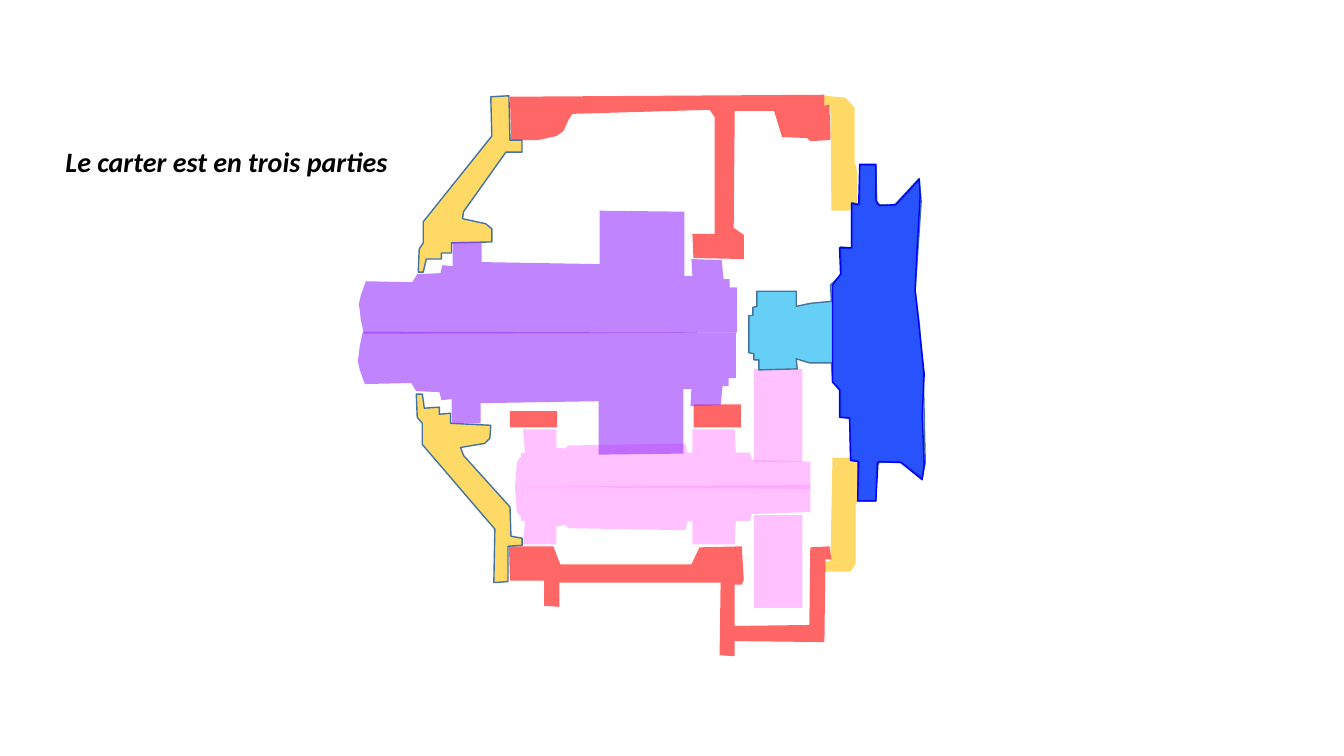
from dataclasses import dataclass
from typing import Optional, Union

import pptx
import pptx.dml.color
import pptx.enum.shapes
import pptx.enum.text
import pptx.oxml.ns
import pptx.util
from lxml import etree
from pptx.util import Cm

COLOURS = {
    "cover": "FFC000", "gear": "FF99FF", "casing": "FF0000",
    "hub": "00B0F0", "flange": "0000FF", "shaft": "9933FF",
    "edge": "43739E", "text": "000000",
}
OPACITY = 60
UNIT = Cm(2.54) / 100  # outlines are drawn in hundredths of an inch

Points = list[tuple[int, int]]


@dataclass
class Outline:
    points: Points
    fill: str
    edge: Optional[str] = None


@dataclass
class Block:
    left: float
    top: float
    width: float
    height: float
    fill: str
    edge: Optional[str] = None


Part = list[Union[Outline, Block]]


def mirrored(points: Points, axis: float, shift: int = 0) -> Points:
    """Reflect an outline in a horizontal axis."""
    return [(x + shift, round(2 * axis - y)) for x, y in points]


# Right cover
COVER_TOP = [(818, 95), (839, 97), (848, 107), (848, 162), (850, 166), (851, 203),
             (845, 204), (843, 209), (825, 209), (824, 105), (818, 105)]
COVER_BOTTOM = [(818, 567), (844, 567), (849, 559), (849, 501), (851, 496), (852, 460),
                (846, 458), (844, 454), (826, 454), (824, 557), (819, 557)]

# Main casing
CASING_TOP = [(506, 96), (818, 94), (818, 105), (823, 104), (824, 139), (804, 140),
              (801, 137), (776, 136), (768, 110), (729, 110), (728, 226), (738, 233),
              (738, 257), (688, 256), (687, 232), (709, 232), (709, 116), (704, 109),
              (568, 113), (564, 119), (561, 126), (559, 130), (552, 135), (534, 139),
              (507, 139)]
CASING_BOTTOM = [(505, 542), (549, 542), (556, 560), (686, 560), (694, 543), (736, 542),
                 (738, 575), (736, 580), (729, 580), (729, 621), (803, 620), (804, 543),
                 (823, 542), (825, 555), (819, 555), (818, 637), (729, 636), (729, 651),
                 (714, 650), (715, 578), (555, 578), (555, 602), (540, 601), (540, 576),
                 (506, 576)]

# Upper halves of the two shafts
LAYSHAFT = [(511, 483), (513, 458), (517, 453), (517, 449), (521, 449), (519, 426),
            (552, 426), (552, 444), (561, 445), (564, 442), (680, 440), (682, 449),
            (687, 449), (687, 426), (729, 426), (730, 449), (744, 449), (746, 456),
            (804, 458), (804, 485)]
MAIN_SHAFT = [(363, 279), (409, 280), (414, 272), (437, 271), (439, 263), (449, 264),
              (449, 240), (478, 240), (478, 260), (595, 262), (595, 209), (679, 210),
              (679, 274), (687, 274), (686, 257), (716, 258), (718, 277), (724, 277),
              (724, 285), (731, 285), (731, 330), (361, 331), (358, 317), (357, 308),
              (356, 302), (358, 293)]

# Hub and flange
HUB = [(912, 177), (887, 204), (870, 203), (869, 164), (853, 164), (853, 203), (845, 201),
       (845, 246), (834, 245), (835, 272), (824, 283), (825, 299), (804, 301), (790, 304),
       (790, 289), (751, 289), (751, 304), (747, 305), (747, 313), (743, 313), (743, 350),
       (748, 351), (748, 357), (753, 357), (753, 367), (791, 366), (790, 356), (803, 360),
       (825, 360), (826, 379), (834, 387), (834, 414), (843, 414), (844, 456), (851, 457),
       (851, 497), (869, 497), (870, 459), (893, 458), (915, 474), (918, 459), (916, 368),
       (912, 320), (908, 288), (914, 200)]
FLANGE = [(912, 178), (889, 203), (873, 204), (869, 199), (869, 163), (853, 163), (852, 203),
          (845, 202), (845, 246), (833, 246), (834, 272), (826, 283), (826, 379), (833, 387),
          (833, 414), (843, 415), (844, 457), (852, 458), (851, 497), (869, 497), (871, 461),
          (872, 458), (894, 459), (915, 476), (917, 461), (915, 410), (917, 371), (908, 288),
          (910, 246), (913, 195)]

# Left bell
BELL_TOP = [(518, 151), (518, 139), (506, 139), (505, 95), (487, 96), (488, 135), (420, 220),
            (420, 241), (416, 247), (415, 270), (420, 270), (423, 257), (438, 257),
            (438, 251), (448, 251), (448, 241), (488, 240), (488, 227), (482, 222),
            (459, 217), (460, 210), (502, 151)]
BELL_BOTTOM = [(507, 532), (518, 534), (518, 541), (504, 542), (504, 577), (490, 578),
               (491, 525), (419, 441), (419, 420), (414, 414), (413, 391), (419, 391),
               (421, 405), (436, 404), (436, 411), (447, 410), (447, 420), (487, 422),
               (486, 435), (481, 440), (457, 444), (460, 452), (506, 503)]

# Parts from back to front; the caption stands between the two lists
BACK_PARTS: list[Part] = [
    [Outline(COVER_TOP, "cover"), Outline(COVER_BOTTOM, "cover")],
    [Block(19, top, 1.22, 2.34, "gear") for top in (9.3, 12.98)],
    [Outline(CASING_TOP, "casing"),
     Block(17.48, 10.19, 1.19, 0.58, "casing"),
     Block(12.85, 10.36, 1.19, 0.41, "casing"),
     Outline(CASING_BOTTOM, "casing")],
    [Outline(LAYSHAFT, "gear"), Outline(mirrored(LAYSHAFT, 483), "gear")],
]
FRONT_PARTS: list[Part] = [
    [Outline(HUB, "hub", "edge"), Outline(FLANGE, "flange", "flange")],
    [Outline(BELL_TOP, "cover", "edge"), Outline(BELL_BOTTOM, "cover", "edge")],
    [Outline(MAIN_SHAFT, "shaft"), Outline(mirrored(MAIN_SHAFT, 330, shift=-1), "shaft")],
]


def colour(name: str) -> pptx.dml.color.RGBColor:
    return pptx.dml.color.RGBColor.from_string(COLOURS[name])


def draw_part(page, part: Part) -> None:
    """Draw the pieces of one part as a group."""
    group = page.shapes.add_group_shape()
    for piece in part:
        if isinstance(piece, Block):
            shape = group.shapes.add_shape(
                pptx.enum.shapes.MSO_SHAPE.RECTANGLE, Cm(piece.left), Cm(piece.top),
                Cm(piece.width), Cm(piece.height))
        else:
            builder = group.shapes.build_freeform(*piece.points[0], scale=UNIT)
            builder.add_line_segments(piece.points[1:], close=True)
            shape = builder.convert_to_shape()
        shape.shadow.inherit = False
        shape.fill.solid()
        shape.fill.fore_color.rgb = colour(piece.fill)
        tint = shape.element.spPr.find(pptx.oxml.ns.qn("a:solidFill"))[0]
        etree.SubElement(tint, pptx.oxml.ns.qn("a:alpha"), val=str(OPACITY * 1000))
        if piece.edge:
            shape.line.color.rgb = colour(piece.edge)
            shape.line.width = pptx.util.Pt(1)
        else:
            shape.line.fill.background()


def add_text(page, text: str, *, left: float, top: float, width: float, height: float,
             size: float, font: str, bold: bool = False, italic: bool = False) -> None:
    box = page.shapes.add_textbox(Cm(left), Cm(top), Cm(width), Cm(height))
    box.text_frame.word_wrap = False
    box.text_frame.auto_size = pptx.enum.text.MSO_AUTO_SIZE.SHAPE_TO_FIT_TEXT
    para = box.text_frame.paragraphs[0]
    span = para.add_run()
    span.text = text
    span.font.size = pptx.util.Pt(size)
    span.font.name = font
    span.font.bold = bold
    span.font.italic = italic
    span.font.color.rgb = colour("text")


def main() -> None:
    deck = pptx.Presentation()
    deck.slide_width, deck.slide_height = Cm(33.87), Cm(19.05)
    page = deck.slides.add_slide(deck.slide_layouts[6])

    for part in BACK_PARTS:
        draw_part(page, part)
    add_text(page, "Le carter est en trois parties", left=1.4, top=3.51, width=8.69,
             height=1.12, size=20, font="Calibri", bold=True, italic=True)
    for part in FRONT_PARTS:
        draw_part(page, part)

    deck.save("out.pptx")


if __name__ == "__main__":
    main()
